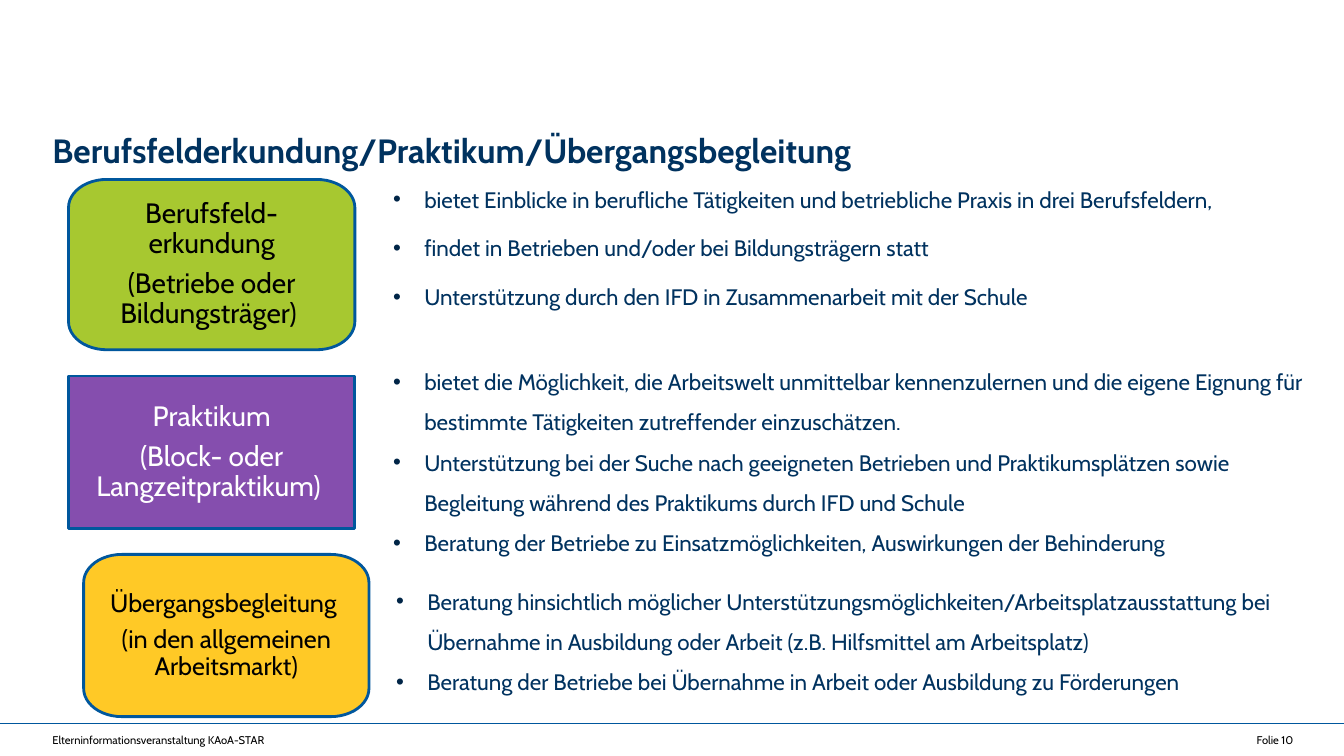
import math

import lxml.etree
import pptx
import pptx.dml.color
import pptx.enum.shapes
import pptx.enum.text
import pptx.oxml.ns
import pptx.util

Inches = pptx.util.Inches
Pt = pptx.util.Pt
qn = pptx.oxml.ns.qn
ALIGN = pptx.enum.text.PP_ALIGN
ANCHOR = pptx.enum.text.MSO_ANCHOR
FIT = pptx.enum.text.MSO_AUTO_SIZE

COLORS = {
    "navy": "00325F", "bullet": "002547", "blue": "00579D",
    "green": "98BF0C", "purple": "7030A0", "yellow": "FFC000",
    "black": "000000", "white": "FFFFFF",
}


def rgb(name):
    return pptx.dml.color.RGBColor.from_string(COLORS[name])


def set_values(target, values):
    for name, value in values.items():
        setattr(target, name, value)


class SlideBuilder:
    font_name = "Cabin"
    opacity = 85
    bullet_indent = 0.31
    corner = (0.38, 0.28)
    corner_steps = 12

    def __init__(self, slide):
        self.slide = slide

    def fill_text(self, shape, lines, size, color, inset=None, bold=False,
                  bullets=False, frame=None, layout=None):
        text_frame = shape.text_frame
        margins = {}
        if inset is not None:
            sides = ("left", "top", "right", "bottom")
            margins = {f"margin_{side}": Inches(inset) for side in sides}
        set_values(text_frame, {"word_wrap": True, **margins, **(frame or {})})
        for index, line in enumerate(lines):
            paragraph = text_frame.paragraphs[0] if index == 0 else text_frame.add_paragraph()
            set_values(paragraph, layout or {})
            if bullets:
                self.bullet(paragraph)
            run = paragraph.add_run()
            run.text = line
            set_values(run.font, {"name": self.font_name, "size": Pt(size), "bold": bold})
            run.font.color.rgb = rgb(color)

    def bullet(self, paragraph):
        properties = paragraph._p.get_or_add_pPr()
        properties.set("marL", str(Inches(self.bullet_indent)))
        properties.set("indent", str(-Inches(self.bullet_indent)))
        color = lxml.etree.SubElement(properties, qn("a:buClr"))
        lxml.etree.SubElement(color, qn("a:srgbClr"), val=COLORS["bullet"])
        lxml.etree.SubElement(properties, qn("a:buFont"), typeface="Arial")
        lxml.etree.SubElement(properties, qn("a:buChar"), char="•")

    def text(self, box, lines, size, color, **style):
        shape = self.slide.shapes.add_textbox(*map(Inches, box))
        self.fill_text(shape, lines, size, color, **style)

    def bullet_list(self, box, lines, space_after=0):
        self.text(box, lines, 16, "navy", bullets=True,
                  frame={"auto_size": FIT.SHAPE_TO_FIT_TEXT},
                  layout={"line_spacing": 1.5, "space_after": Pt(space_after)})

    def rounded_outline(self, left, top, width, height):
        radius_x, radius_y = self.corner
        centers = [
            (left + width - radius_x, top + height - radius_y),
            (left + radius_x, top + height - radius_y),
            (left + radius_x, top + radius_y),
            (left + width - radius_x, top + radius_y),
        ]
        points = []
        for quarter, (x, y) in enumerate(centers):
            for step in range(self.corner_steps + 1):
                angle = math.pi / 2 * (quarter + step / self.corner_steps)
                points.append((Inches(x + radius_x * math.cos(angle)),
                               Inches(y + radius_y * math.sin(angle))))
        builder = self.slide.shapes.build_freeform(*points[0])
        builder.add_line_segments(points[1:], close=True)
        return builder.convert_to_shape()

    def phase(self, box, lines, size, fill, color="black", rounded=True):
        if rounded:
            shape = self.rounded_outline(*box)
        else:
            rectangle = pptx.enum.shapes.MSO_SHAPE.RECTANGLE
            shape = self.slide.shapes.add_shape(rectangle, *map(Inches, box))
        shape.shadow.inherit = False
        shape.fill.solid()
        shape.fill.fore_color.rgb = rgb(fill)
        fill_color = shape._element.spPr.find(qn("a:solidFill"))[0]
        lxml.etree.SubElement(fill_color, qn("a:alpha"), val=str(self.opacity * 1000))
        shape.line.color.rgb = rgb("blue")
        shape.line.width = Pt(2)
        self.fill_text(shape, lines, size, color, inset=0.18,
                       frame={"vertical_anchor": ANCHOR.MIDDLE},
                       layout={"alignment": ALIGN.CENTER, "line_spacing": 0.9,
                               "space_after": Pt(size * 0.35)})

    def rule(self, start, end, color, width):
        straight = pptx.enum.shapes.MSO_CONNECTOR.STRAIGHT
        line = self.slide.shapes.add_connector(straight, *map(Inches, start + end))
        line.line.color.rgb = rgb(color)
        line.line.width = Pt(width)
        lxml.etree.SubElement(line._element.spPr, qn("a:effectLst"))


def main():
    presentation = pptx.Presentation()
    set_values(presentation, {"slide_width": Inches(13.33), "slide_height": Inches(7.5)})
    page = SlideBuilder(presentation.slides.add_slide(presentation.slide_layouts[6]))

    page.rule((0, 7.18), (13.33, 7.18), "blue", 0.57)
    page.text((0.52, 1.09, 12.31, 0.53),
              ["Berufsfelderkundung/Praktikum/Übergangsbegleitung"],
              24, "navy", inset=0, bold=True, layout={"line_spacing": 1.5})

    page.phase((0.68, 1.78, 2.84, 1.69),
               ["Berufsfeld-erkundung", "(Betriebe oder Bildungsträger) "], 20, "green")
    page.bullet_list((3.8, 1.66, 9.53, 1.48), [
        "bietet Einblicke in berufliche Tätigkeiten und betriebliche Praxis in drei Berufsfeldern,",
        "findet in Betrieben und/oder bei Bildungsträgern statt",
        "Unterstützung durch den IFD in Zusammenarbeit mit der Schule",
    ], space_after=6)

    page.phase((0.68, 3.73, 2.84, 1.51),
               ["Praktikum", "(Block- oder Langzeitpraktikum) "],
               20, "purple", color="white", rounded=False)
    page.bullet_list((3.8, 3.47, 9.53, 2.12), [
        "bietet die Möglichkeit, die Arbeitswelt unmittelbar kennenzulernen und die eigene "
        "Eignung für bestimmte Tätigkeiten zutreffender einzuschätzen.",
        "Unterstützung bei der Suche nach geeigneten Betrieben und Praktikumsplätzen sowie "
        "Begleitung während des Praktikums durch IFD und Schule",
        "Beratung der Betriebe zu Einsatzmöglichkeiten, Auswirkungen der Behinderung",
    ])

    page.phase((0.83, 5.5, 2.83, 1.61),
               ["Übergangsbegleitung ", "(in den allgemeinen Arbeitsmarkt)"], 18, "yellow")
    page.bullet_list((3.83, 5.65, 9.1, 1.31), [
        "Beratung hinsichtlich möglicher Unterstützungsmöglichkeiten/Arbeitsplatzausstattung "
        "bei Übernahme in Ausbildung oder Arbeit (z.B. Hilfsmittel am Arbeitsplatz)",
        "Beratung der Betriebe bei Übernahme in Arbeit oder Ausbildung zu Förderungen",
    ])

    footers = [
        ((0.52, 7.18, 8.13, 0.32), "Elterninformationsveranstaltung KAoA-STAR", ALIGN.LEFT),
        ((9.51, 7.18, 3.32, 0.32), "Folie 10", ALIGN.RIGHT),
    ]
    for box, footer, alignment in footers:
        page.text(box, [footer], 8, "black", inset=0,
                  frame={"vertical_anchor": ANCHOR.MIDDLE},
                  layout={"alignment": alignment})

    presentation.save("out.pptx")


if __name__ == "__main__":
    main()
